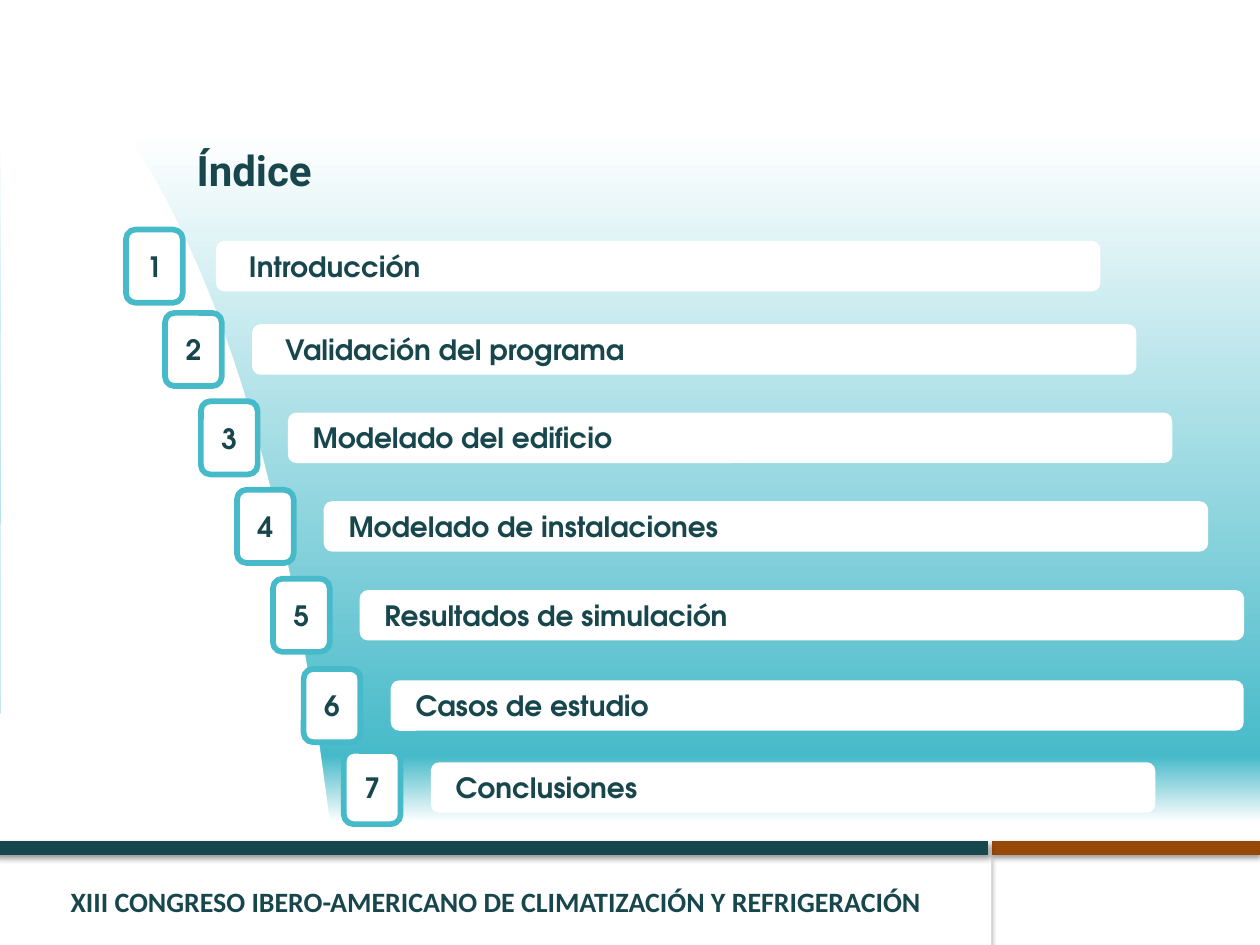
import pptx
import pptx.util
import pptx.dml.color
import pptx.enum.dml
import pptx.enum.shapes
import pptx.enum.text
import pptx.oxml
import pptx.oxml.ns
from lxml import etree

Pt = pptx.util.Pt
RGB = pptx.dml.color.RGBColor.from_string
SHAPE = pptx.enum.shapes.MSO_SHAPE
ALIGN = pptx.enum.text.PP_ALIGN
ANCHOR = pptx.enum.text.MSO_ANCHOR
qn = pptx.oxml.ns.qn

# Content: label, number box left and top, bar left, bar width, text indent
TITLE = "Índice"
FOOTER = "XIII CONGRESO IBERO-AMERICANO DE CLIMATIZACIÓN Y REFRIGERACIÓN"
TOPICS = [
    ("Introducción", 72, 131.2, 123.4, 505.4, 17.5),
    ("Validación del programa", 94.3, 178.8, 144, 505.4, 17.5),
    ("Modelado del edificio", 114.8, 229.3, 164.5, 505.4, 12.8),
    ("Modelado de instalaciones", 135.4, 279.9, 185, 505.4, 12.8),
    ("Resultados de simulación", 156, 330.7, 205.5, 505.4, 12.8),
    ("Casos de estudio", 173.5, 382.3, 223.3, 487.4, 12.8),
    ("Conclusiones", 196.5, 429.1, 246.2, 414, 12.8),
]

THEME = {
    "dark": "17474D", "teal": "47BAC9", "rust": "984807", "white": "FFFFFF",
    "title": ("Roboto", 24), "topic": ("TeX Gyre Adventor", 16),
    "footer": ("Calibri", 16),
    "gradient": [(0, "white"), (14, "white"), (80, "teal"), (87, "white")],
}
WIDTH, HEIGHT = 720, 540
BOX_W, BOX_H, BAR_H = 32.4, 41.8, 28.8
RULE_Y = 484.6
RULES = [("rust", 566.6, WIDTH), ("dark", -2, 564.5)]
# Start, two control points and end of the white curved edge
EDGE = [(0.7, 0), (131, 92.9), (172.8, 322.6), (193.7, 514.8)]
EDGE_STEPS = 40


def colour(name):
    return RGB(THEME[name])


def write(shape, text, style, align, margins=(7.2, 3.6, 7.2, 3.6),
          anchor=ANCHOR.MIDDLE):
    frame = shape.text_frame
    frame.word_wrap = True
    frame.vertical_anchor = anchor
    (frame.margin_left, frame.margin_top,
     frame.margin_right, frame.margin_bottom) = map(Pt, margins)
    frame.text = text
    paragraph = frame.paragraphs[0]
    paragraph.alignment = align
    font = paragraph.font
    font.name, size = THEME[style]
    font.size, font.bold = Pt(size), True
    font.color.rgb = colour("dark")


def add_box(slide, kind, left, top, width, height, outline=None):
    box = slide.shapes.add_shape(kind, Pt(left), Pt(top), Pt(width), Pt(height))
    box.shadow.inherit = False
    box.fill.solid()
    box.fill.fore_color.rgb = colour("white")
    if outline:
        box.line.color.rgb = colour(outline)
        box.line.width = Pt(3.25)
    else:
        box.line.fill.background()
    return box


def add_shadow(shape, alpha):
    properties = shape.element.spPr
    effects = properties.find(qn("a:effectLst"))
    if effects is None:
        effects = etree.SubElement(properties, qn("a:effectLst"))
    shadow = etree.SubElement(
        effects, qn("a:outerShdw"), blurRad=str(Pt(3.1)), dist=str(Pt(1.8)),
        dir="5400000", rotWithShape="0")
    black = etree.SubElement(shadow, qn("a:srgbClr"), val="000000")
    etree.SubElement(black, qn("a:alpha"), val=str(alpha * 1000))


def add_background(slide):
    panel = add_box(slide, SHAPE.RECTANGLE, 0, 0, WIDTH, HEIGHT)
    panel.fill.gradient()
    panel.fill.gradient_angle = 270
    stops = panel.element.spPr.find(".//" + qn("a:gsLst"))
    for stop in list(stops):
        stops.remove(stop)
    for position, name in THEME["gradient"]:
        stop = etree.SubElement(stops, qn("a:gs"), pos=str(position * 1000))
        etree.SubElement(stop, qn("a:srgbClr"), val=THEME[name])

    # White area bounded by a cubic curve
    def edge_point(t):
        weights = ((1 - t) ** 3, 3 * t * (1 - t) ** 2, 3 * t * t * (1 - t), t ** 3)
        return tuple(Pt(sum(w * p[axis] for w, p in zip(weights, EDGE)))
                     for axis in (0, 1))

    outline = [edge_point(i / EDGE_STEPS) for i in range(EDGE_STEPS + 1)]
    builder = slide.shapes.build_freeform(*outline[0])
    builder.add_line_segments(outline[1:] + [(0, Pt(516.2))], close=True)
    curve = builder.convert_to_shape()
    curve.shadow.inherit = False
    curve.fill.solid()
    curve.fill.fore_color.rgb = colour("white")
    curve.line.fill.background()


def add_footer(slide):
    footer = add_box(slide, SHAPE.RECTANGLE, 0, 489.6, 566.6, 50.4)
    add_shadow(footer, 35)
    write(footer, FOOTER, "footer", ALIGN.CENTER)
    for name, start, end in RULES:
        rule = slide.shapes.add_connector(
            pptx.enum.shapes.MSO_CONNECTOR.STRAIGHT,
            Pt(start), Pt(RULE_Y), Pt(end), Pt(RULE_Y))
        rule.line.color.rgb = colour(name)
        rule.line.width = Pt(7.75)
        add_shadow(rule, 38)


def add_title(slide):
    title = slide.shapes.title
    title.left, title.top, title.width, title.height = map(
        Pt, (93.6, 75.6, 614.9, 45.4))
    write(title, TITLE, "title", ALIGN.LEFT, (18.7, 3.6, 13, 9.4), ANCHOR.BOTTOM)
    # Bring the title in front of the background
    title.element.getparent().append(title.element)


def add_topics(slide):
    for number, topic in enumerate(TOPICS, 1):
        label, left, top, bar_left, bar_width, indent = topic
        box = add_box(slide, SHAPE.ROUNDED_RECTANGLE, left, top, BOX_W, BOX_H, "teal")
        write(box, str(number), "topic", ALIGN.CENTER)
        bar = add_box(slide, SHAPE.ROUNDED_RECTANGLE, bar_left,
                      top + (BOX_H - BAR_H) / 2, bar_width, BAR_H)
        write(bar, label, "topic", ALIGN.LEFT, (indent, 3.6, 7.2, 3.6))


def main():
    deck = pptx.Presentation()
    deck.slide_width, deck.slide_height = Pt(WIDTH), Pt(HEIGHT)
    slide = deck.slides.add_slide(deck.slide_layouts[5])
    add_background(slide)
    add_footer(slide)
    add_title(slide)
    add_topics(slide)
    deck.save("out.pptx")


if __name__ == "__main__":
    main()
